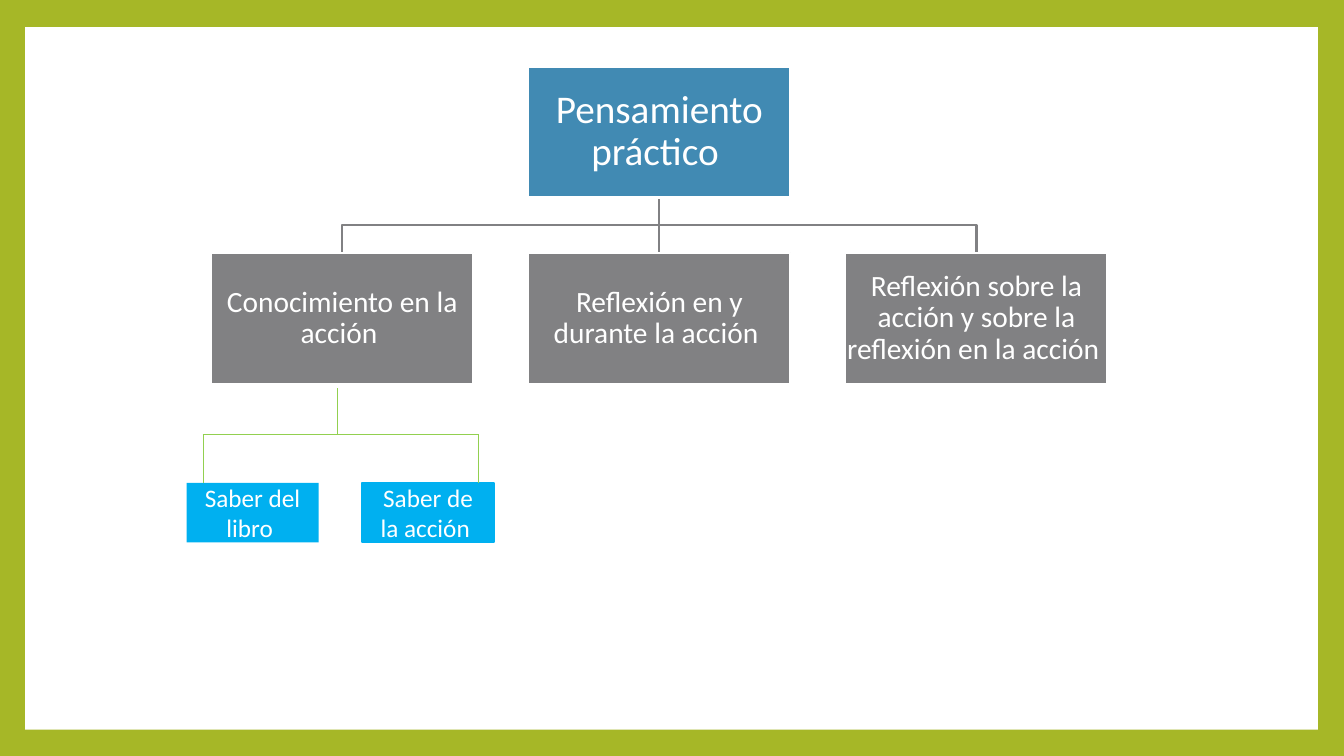
"""Build the concept map of practical thinking."""
from dataclasses import dataclass
from typing import Optional

from lxml import etree
from pptx import Presentation
from pptx.dml.color import RGBColor
from pptx.enum.shapes import MSO_CONNECTOR, MSO_SHAPE
from pptx.enum.text import MSO_ANCHOR, PP_ALIGN
from pptx.oxml.ns import qn
from pptx.util import Inches, Pt

RECT = MSO_SHAPE.RECTANGLE
STRAIGHT = MSO_CONNECTOR.STRAIGHT
MIDDLE = MSO_ANCHOR.MIDDLE
CENTER = PP_ALIGN.CENTER

FONT = "Calibri"
WHITE, OLIVE, BLUE, GRAY = "FFFFFF", "A6B727", "418AB3", "818183"
CYAN, GREEN = "00B0F0", "92D050"
BOX_W, BOX_H = 2.6, 1.3
ROOT_X, ROOT_Y = 5.24, 0.66
BRANCH_Y, BRANCH_STEP = 2.51, 3.145
LEAF_Y, LEAF_W, LEAF_H = 4.79, 1.31, 0.59
FORK_Y = 4.31


@dataclass
class Box:
    text: str
    x: float
    y: float
    w: float
    h: float
    fill: str
    size: float
    line: Optional[str] = None
    inset: Optional[float] = None
    spacing: float = 1.0


@dataclass
class Line:
    x1: float
    y1: float
    x2: float
    y2: float
    color: str = GREEN
    width: float = 0.79


def rgb(color: str) -> RGBColor:
    return RGBColor.from_string(color)


def draw_box(s, box: Box) -> None:
    sp = s.shapes.add_shape(RECT, Inches(box.x), Inches(box.y), Inches(box.w), Inches(box.h))
    sp.shadow.inherit = False
    sp.fill.solid()
    sp.fill.fore_color.rgb = rgb(box.fill)
    if box.line:
        sp.line.color.rgb = rgb(box.line)
        sp.line.width = Pt(1.5)
    else:
        sp.line.fill.background()
    if not box.text:
        return
    tf = sp.text_frame
    tf.word_wrap = True
    tf.vertical_anchor = MIDDLE
    if box.inset is not None:
        tf.margin_left = tf.margin_right = Inches(box.inset)
        tf.margin_top = tf.margin_bottom = Inches(box.inset)
    p = tf.paragraphs[0]
    p.text = box.text
    p.alignment = CENTER
    p.line_spacing = box.spacing
    r = p.runs[0]
    r.font.name = FONT
    r.font.size = Pt(box.size)
    r.font.color.rgb = rgb(WHITE)


def draw_line(s, line: Line) -> None:
    cx = s.shapes.add_connector(STRAIGHT, Inches(line.x1), Inches(line.y1),
                                Inches(line.x2), Inches(line.y2))
    cx.line.color.rgb = rgb(line.color)
    cx.line.width = Pt(line.width)
    etree.SubElement(cx._element.spPr, qn("a:effectLst"))


def draw_elbow(s, x1: float, y1: float, x2: float, y2: float) -> None:
    mid = (y1 + y2) / 2
    points = [(Inches(x), Inches(y)) for x, y in ((x1, mid), (x2, mid), (x2, y2))]
    builder = s.shapes.build_freeform(Inches(x1), Inches(y1))
    builder.add_line_segments(points, close=False)
    sp = builder.convert_to_shape()
    sp.shadow.inherit = False
    sp.fill.background()
    sp.line.color.rgb = rgb(GRAY)
    sp.line.width = Pt(1.5)


def main() -> None:
    prs = Presentation()
    prs.slide_width, prs.slide_height = Inches(13.33), Inches(7.5)
    s = prs.slides.add_slide(prs.slide_layouts[6])
    s.background.fill.solid()
    s.background.fill.fore_color.rgb = rgb(OLIVE)
    draw_box(s, Box("", 0.25, 0.27, 12.82, 6.97, WHITE, 18))

    center, root_bottom = ROOT_X + BOX_W / 2, ROOT_Y + BOX_H
    for side in (1, -1):
        draw_elbow(s, center, root_bottom, center + side * BRANCH_STEP, BRANCH_Y)
    draw_line(s, Line(center, root_bottom, center, BRANCH_Y, GRAY, 1.5))

    draw_box(s, Box("Pensamiento práctico ", ROOT_X, ROOT_Y, BOX_W, BOX_H,
                    BLUE, 28, WHITE, 0.02, 0.9))
    branches = ("Conocimiento en la acción ",
                "Reflexión en y durante la acción ",
                "Reflexión sobre la acción y sobre la reflexión en la acción ")
    for i, text in enumerate(branches, start=-1):
        draw_box(s, Box(text, ROOT_X + i * BRANCH_STEP, BRANCH_Y, BOX_W, BOX_H,
                        GRAY, 21, WHITE, 0.01, 0.9))

    draw_line(s, Line(3.35, 3.85, 3.35, FORK_Y))
    draw_line(s, Line(2.01, FORK_Y, 4.75, FORK_Y))
    draw_box(s, Box("Saber del libro ", 1.85, LEAF_Y, LEAF_W, LEAF_H, CYAN, 18))
    draw_box(s, Box("Saber de la acción ", 3.59, LEAF_Y, LEAF_W, LEAF_H, CYAN, 18, CYAN))
    for x in (4.75, 2.02):
        draw_line(s, Line(x, FORK_Y, x, LEAF_Y))

    prs.save("out.pptx")


if __name__ == "__main__":
    main()
